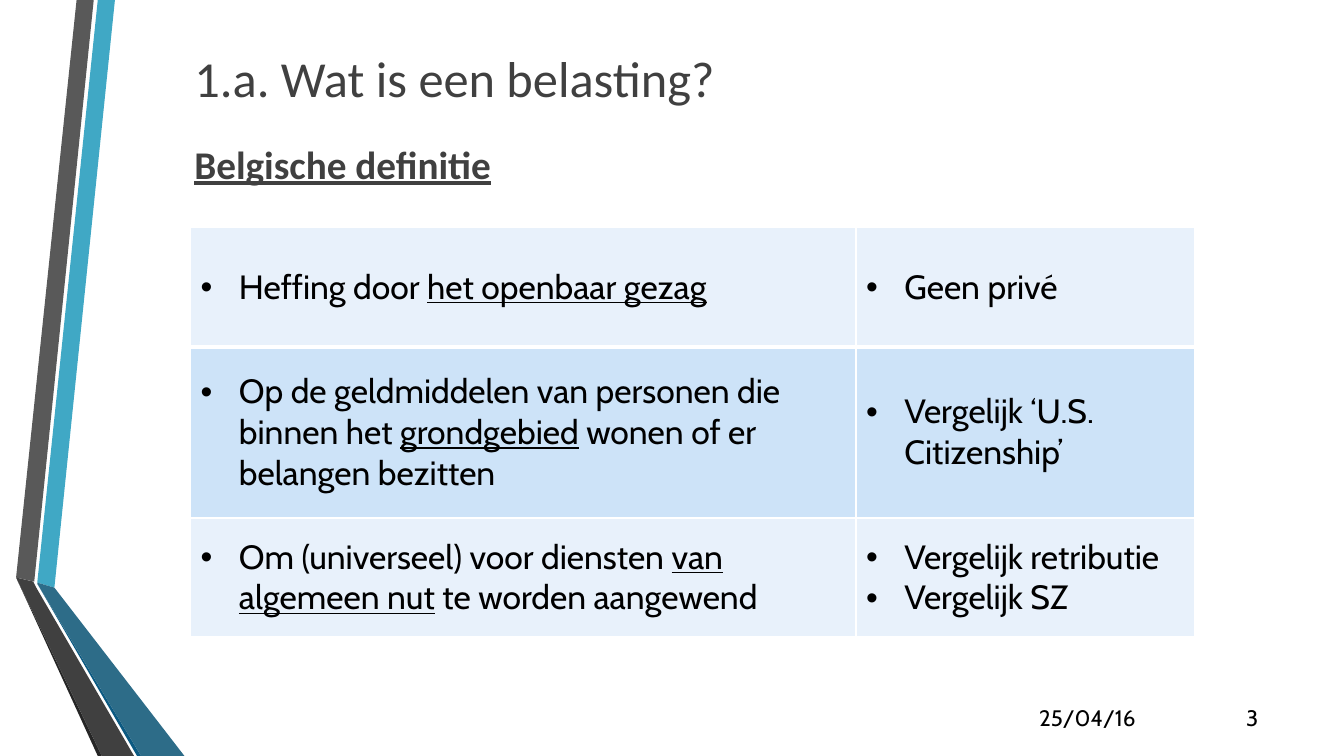
from dataclasses import dataclass

from lxml.etree import SubElement
from pptx import Presentation
from pptx.dml.color import RGBColor
from pptx.enum.text import MSO_ANCHOR, PP_ALIGN
from pptx.oxml.ns import qn
from pptx.util import Inches, Pt

BLACK = RGBColor(0x00, 0x00, 0x00)
WHITE = RGBColor(0xFF, 0xFF, 0xFF)
CHARCOAL = RGBColor(0x40, 0x40, 0x40)
GREY = RGBColor(0x59, 0x59, 0x59)
DARK_GREY = RGBColor(0x26, 0x26, 0x26)
TURQUOISE = RGBColor(0x40, 0xA8, 0xC5)
NAVY = RGBColor(0x0C, 0x5A, 0x82)
TEAL = RGBColor(0x2D, 0x6C, 0x88)
PALE_BLUE = RGBColor(0xE8, 0xF1, 0xFB)
LIGHT_BLUE = RGBColor(0xCD, 0xE3, 0xF8)


@dataclass(frozen=True)
class Ribbon:
    color: RGBColor
    points: tuple[tuple[float, float], ...]


@dataclass(frozen=True)
class Span:
    text: str
    underline: bool = False


@dataclass(frozen=True)
class Label:
    text: str
    box: tuple[float, float, float, float]
    size: int
    font: str
    color: RGBColor
    anchor: MSO_ANCHOR
    align: PP_ALIGN = PP_ALIGN.LEFT
    emphasis: bool = False


@dataclass(frozen=True)
class Row:
    height: float
    fill: RGBColor
    cells: tuple[tuple[tuple[Span, ...], ...], ...]  # cell > paragraph > span


RIBBONS = (
    Ribbon(TURQUOISE, ((0.37, 5.78), (0.54, 5.83), (1.14, 0), (0.97, 0))),
    Ribbon(GREY, ((0.93, 0), (0.76, 0), (0.16, 5.73), (0.34, 5.77))),
    Ribbon(DARK_GREY, ((0.16, 5.73), (0.97, 7.5), (1.01, 7.5))),
    Ribbon(NAVY, ((0.37, 5.79), (1.36, 7.5), (1.4, 7.5))),
    Ribbon(TEAL, ((0.37, 5.79), (1.4, 7.5), (1.83, 7.5), (0.54, 5.83), (0.37, 5.78))),
    Ribbon(CHARCOAL, ((1.33, 7.5), (0.36, 5.83), (0.33, 5.77), (0.16, 5.73), (1.01, 7.5))),
)

LABELS = (
    Label("1.a. Wat is een belasting?", (1.83, 0.39, 10.75, 0.75), 36, "Calibri",
          CHARCOAL, MSO_ANCHOR.MIDDLE),
    Label("Belgische definitie", (1.83, 1.34, 10.37, 0.6), 28, "Calibri",
          CHARCOAL, MSO_ANCHOR.TOP, emphasis=True),
    Label("25/04/16", (10.16, 6.9, 1.25, 0.4), 16, "Cabin",
          BLACK, MSO_ANCHOR.BOTTOM, PP_ALIGN.CENTER),
    Label("3", (11.98, 6.9, 0.6, 0.4), 16, "Cabin",
          BLACK, MSO_ANCHOR.BOTTOM, PP_ALIGN.RIGHT),
)

COLUMN_WIDTHS = (6.6, 3.36)
ROWS = (
    Row(1.18, PALE_BLUE, (
        ((Span("Heffing door "), Span("het openbaar gezag", True)),),
        ((Span("Geen privé"),),),
    )),
    Row(1.7, LIGHT_BLUE, (
        ((Span("Op de geldmiddelen van personen die binnen het "),
          Span("grondgebied", True), Span(" wonen of er belangen bezitten")),),
        ((Span("Vergelijk ‘U.S. Citizenship’"),),),
    )),
    Row(1.18, PALE_BLUE, (
        ((Span("Om (universeel) voor diensten "), Span("van algemeen nut", True),
          Span(" te worden aangewend")),),
        ((Span("Vergelijk retributie"),), (Span("Vergelijk SZ"),)),
    )),
)


def add_run(paragraph, text: str, size: int, font: str, color: RGBColor,
            underline: bool = False, bold: bool = False) -> None:
    run = paragraph.add_run()
    run.text = text
    run.font.size = Pt(size)
    run.font.name = font
    run.font.color.rgb = color
    run.font.underline = underline
    run.font.bold = bold


def draw_ribbon(slide, ribbon: Ribbon) -> None:
    start, *others = [(Inches(x), Inches(y)) for x, y in ribbon.points]
    builder = slide.shapes.build_freeform(*start)
    builder.add_line_segments(others, close=True)
    shape = builder.convert_to_shape()
    shape.shadow.inherit = False
    shape.fill.solid()
    shape.fill.fore_color.rgb = ribbon.color
    shape.line.fill.background()


def draw_label(slide, label: Label) -> None:
    frame = slide.shapes.add_textbox(*map(Inches, label.box)).text_frame
    frame.word_wrap = True
    frame.vertical_anchor = label.anchor
    paragraph = frame.paragraphs[0]
    paragraph.alignment = label.align
    add_run(paragraph, label.text, label.size, label.font, label.color,
            label.emphasis, label.emphasis)


def add_bullet(paragraph) -> None:
    properties = paragraph._p.get_or_add_pPr()
    properties.set("marL", str(Inches(0.38)))
    properties.set("indent", str(-Inches(0.38)))
    SubElement(properties, qn("a:buFont"), typeface="Arial")
    SubElement(properties, qn("a:buChar"), char="•")


def add_border(cell, side: str, width: int) -> None:
    properties = cell._tc.get_or_add_tcPr()
    line = SubElement(properties, qn(f"a:ln{side}"), w=str(Pt(width)))
    fill = SubElement(line, qn("a:solidFill"))
    SubElement(fill, qn("a:srgbClr"), val=str(WHITE))


def draw_table(slide) -> None:
    table = slide.shapes.add_table(
        len(ROWS), len(COLUMN_WIDTHS), Inches(1.89), Inches(2.26),
        Inches(sum(COLUMN_WIDTHS)), Inches(sum(row.height for row in ROWS))).table
    table.first_row = False
    table.horz_banding = False
    for column, width in zip(table.columns, COLUMN_WIDTHS):
        column.width = Inches(width)

    for row_index, row in enumerate(ROWS):
        table.rows[row_index].height = Inches(row.height)
        for column_index, paragraphs in enumerate(row.cells):
            cell = table.cell(row_index, column_index)
            cell.vertical_anchor = MSO_ANCHOR.MIDDLE
            # The line under the first row is heavier than the others
            for side in "LRTB":
                heavy = (row_index, side) in ((0, "B"), (1, "T"))
                add_border(cell, side, 3 if heavy else 1)
            cell.fill.solid()
            cell.fill.fore_color.rgb = row.fill
            frame = cell.text_frame
            for index, spans in enumerate(paragraphs):
                paragraph = frame.add_paragraph() if index else frame.paragraphs[0]
                add_bullet(paragraph)
                for span in spans:
                    add_run(paragraph, span.text, 24, "Cabin", BLACK, span.underline)


def main() -> None:
    presentation = Presentation()
    presentation.slide_width = Inches(13.33)
    presentation.slide_height = Inches(7.5)
    slide = presentation.slides.add_slide(presentation.slide_layouts[6])

    # Folded ribbons on the left edge
    for ribbon in RIBBONS:
        draw_ribbon(slide, ribbon)

    # Title, subtitle, date and slide number
    for label in LABELS:
        draw_label(slide, label)

    # Definition beside its remarks
    draw_table(slide)

    presentation.save("out.pptx")


if __name__ == "__main__":
    main()
